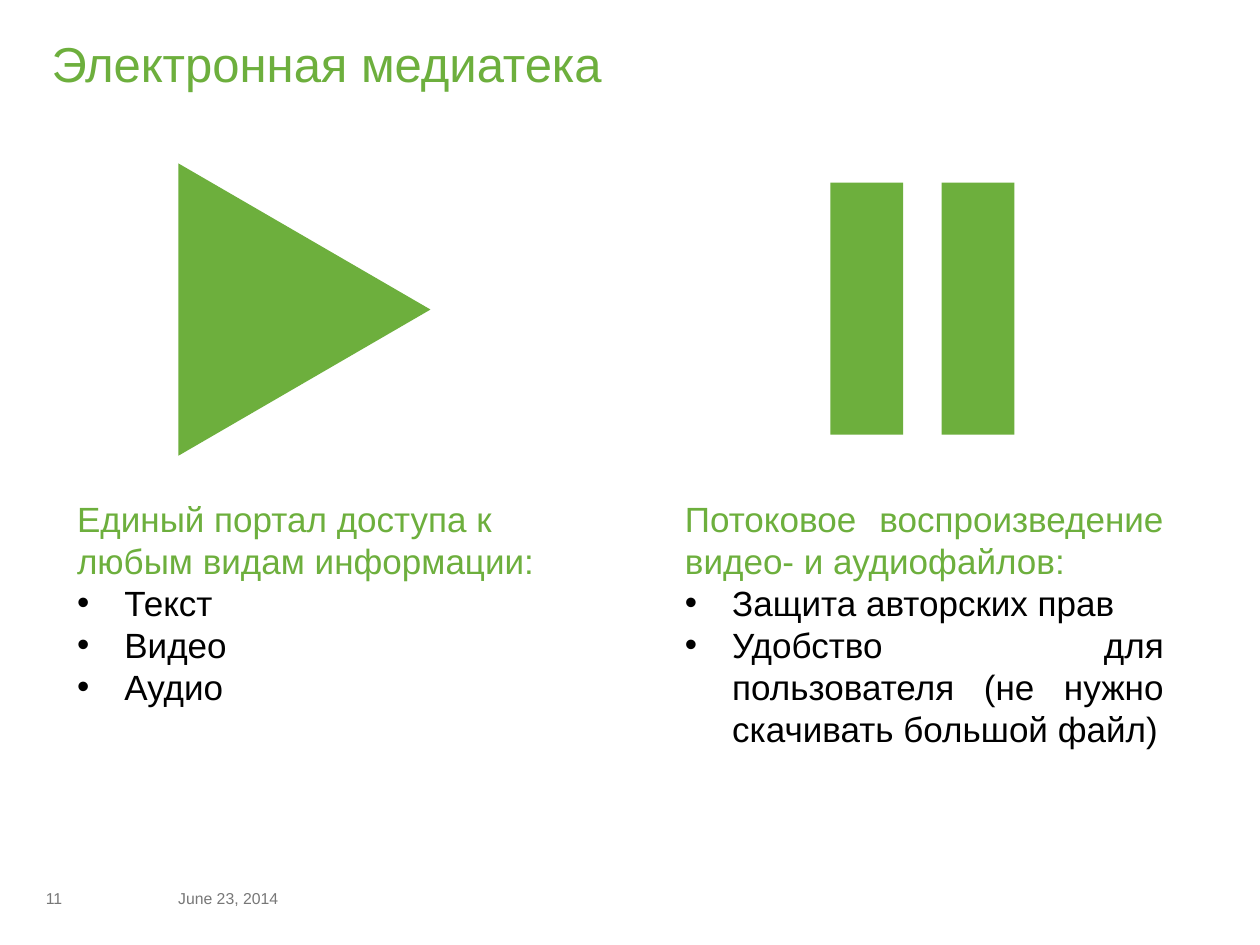
from lxml import etree
from pptx import Presentation
from pptx.dml.color import RGBColor
from pptx.enum.shapes import MSO_SHAPE as Shape
from pptx.enum.text import MSO_ANCHOR as Anchor, PP_ALIGN as Align
from pptx.oxml.ns import qn
from pptx.util import Pt

GREEN = RGBColor(0x6D, 0xAF, 0x3D)
BLACK = RGBColor(0, 0, 0)
GRAY = RGBColor(0x77, 0x77, 0x77)

BULLET_INDENT = Pt(27)
BODY_MARGINS = (2.2, 0, 0, 0)


def add_text_box(slide, box, margins, anchor=Anchor.TOP):
    frame = slide.shapes.add_textbox(*map(Pt, box)).text_frame
    left, top, right, bottom = map(Pt, margins)
    settings = {
        "word_wrap": True, "vertical_anchor": anchor,
        "margin_left": left, "margin_top": top,
        "margin_right": right, "margin_bottom": bottom,
    }
    for name, value in settings.items():
        setattr(frame, name, value)
    return frame


def write(paragraph, text, size, color):
    paragraph.text = text
    for name, value in {"name": "Arial", "size": Pt(size)}.items():
        setattr(paragraph.font, name, value)
    paragraph.font.color.rgb = color


def add_bullet(paragraph):
    properties = paragraph._p.get_or_add_pPr()
    properties.set("marL", str(BULLET_INDENT))
    properties.set("indent", str(-BULLET_INDENT))
    etree.SubElement(properties, qn("a:buFont")).set("typeface", "Arial")
    etree.SubElement(properties, qn("a:buChar")).set("char", "•")


def add_green_shape(slide, kind, box):
    shape = slide.shapes.add_shape(kind, *map(Pt, box))
    shape.shadow.inherit = False
    shape.fill.solid()
    shape.fill.fore_color.rgb = GREEN
    shape.line.fill.background()
    return shape


def add_title(slide, box, text):
    paragraph = add_text_box(slide, box, (0, 0, 0, 0)).paragraphs[0]
    paragraph.line_spacing = 0.9
    write(paragraph, text, 28, GREEN)


def add_play_icon(slide, box):
    left, top, width, height = box
    # The triangle is laid out upright, then turned about its centre
    upright = (left + (width - height) / 2, top + (height - width) / 2, height, width)
    add_green_shape(slide, Shape.ISOSCELES_TRIANGLE, upright).rotation = 90


def add_pause_icon(slide, box, bar_width):
    left, top, width, height = box
    for bar_left in (left, left + width - bar_width):
        add_green_shape(slide, Shape.RECTANGLE, (bar_left, top, bar_width, height))


def add_feature_list(slide, box, heading, items, alignment):
    frame = add_text_box(slide, box, BODY_MARGINS)
    heading_paragraph = frame.paragraphs[0]
    heading_paragraph.alignment = alignment
    write(heading_paragraph, heading, 20, GREEN)
    for item in items:
        paragraph = frame.add_paragraph()
        paragraph.alignment = alignment
        add_bullet(paragraph)
        write(paragraph, item, 20, BLACK)


def add_footer(slide, box, text):
    frame = add_text_box(slide, box, (7.2, 3.6, 7.2, 3.6), Anchor.MIDDLE)
    write(frame.paragraphs[0], text, 9, GRAY)


def main():
    presentation = Presentation()
    presentation.slide_width, presentation.slide_height = Pt(720), Pt(540)
    slide = presentation.slides.add_slide(presentation.slide_layouts[6])

    add_title(slide, (29.5, 23, 662.4, 64.8), "Электронная медиатека")

    # Left column: one portal
    add_play_icon(slide, (102, 93.4, 144, 167))
    add_feature_list(
        slide, (41.8, 284.4, 303, 244),
        "Единый портал доступа к любым видам информации:",
        ["Текст", "Видео", "Аудио"], Align.LEFT)

    # Right column: streaming
    add_pause_icon(slide, (474.5, 104.4, 105.2, 144), 41.6)
    add_feature_list(
        slide, (389.2, 284.4, 275.8, 246),
        "Потоковое воспроизведение видео- и аудиофайлов:",
        ["Защита авторских прав",
         "Удобство для пользователя (не нужно скачивать большой файл)"],
        Align.JUSTIFY)

    # Footer: page number and date
    add_footer(slide, (19.2, 499, 72, 28.8), "11")
    add_footer(slide, (94.8, 499, 158.4, 28.8), "June 23, 2014")

    presentation.save("out.pptx")


if __name__ == "__main__":
    main()
